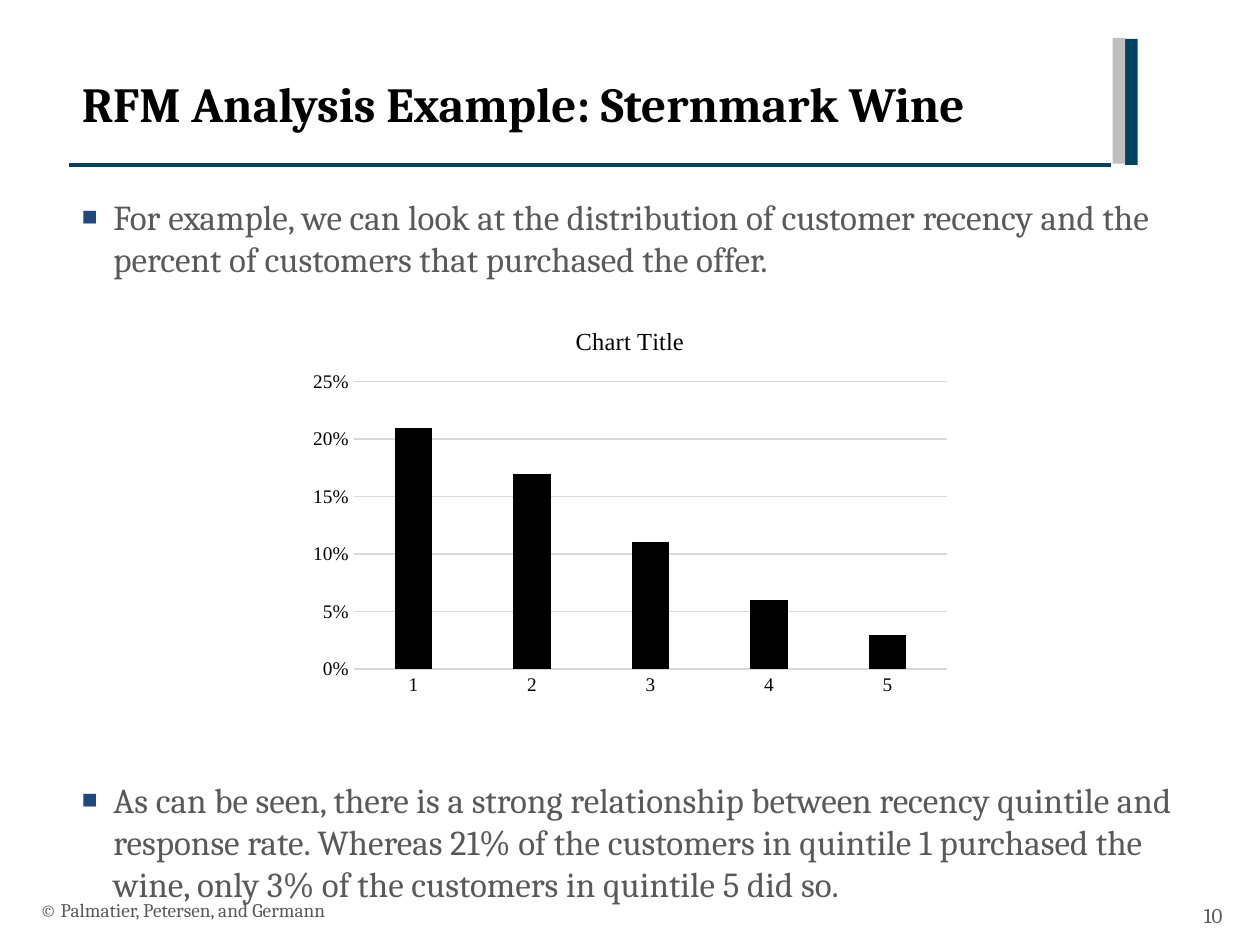
import pptx
import pptx.chart.data
import pptx.dml.color
import pptx.enum.chart
import pptx.enum.shapes
import pptx.enum.text
import pptx.oxml
import pptx.oxml.ns
import pptx.util

SCALE = 9144
COLORS = {
    "navy": "004264",
    "silver": "BFBFBF",
    "ink": "000000",
    "body": "595959",
    "bullet": "1F497D",
    "grid": "D9D9D9",
}
SERIF = "Cambria"
CHART_SERIF = "Times New Roman"


def px(*lengths):
    return [pptx.util.Emu(length * SCALE) for length in lengths]


def color(name):
    return pptx.dml.color.RGBColor.from_string(COLORS[name])


def add_xml(parent, tag, **attributes):
    element = pptx.oxml.parse_xml(f"<{tag} {pptx.oxml.ns.nsdecls('a')}/>")
    for key, value in attributes.items():
        element.set(key, value)
    parent.append(element)
    return element


class SlideBuilder:
    def __init__(self, slide):
        self.slide = slide

    def style(self, font, size, tint, face=SERIF, bold=False):
        font.name = face
        font.size = pptx.util.Pt(size)
        font.bold = bold
        font.color.rgb = color(tint)

    def place(self, holder, box):
        holder.left, holder.top, holder.width, holder.height = px(*box)
        frame = holder.text_frame
        frame.word_wrap = True
        frame.auto_size = pptx.enum.text.MSO_AUTO_SIZE.NONE
        frame.vertical_anchor = pptx.enum.text.MSO_ANCHOR.TOP
        return frame

    def rule(self, start, end, tint, weight):
        line = self.slide.shapes.add_connector(
            pptx.enum.shapes.MSO_CONNECTOR.STRAIGHT, *px(*start, *end))
        line.line.color.rgb = color(tint)
        line.line.width = pptx.util.Pt(weight)
        add_xml(line._element.spPr, "a:effectLst")

    def bar(self, box, tint):
        block = self.slide.shapes.add_shape(
            pptx.enum.shapes.MSO_SHAPE.RECTANGLE, *px(*box))
        block.shadow.inherit = False
        block.fill.solid()
        block.fill.fore_color.rgb = color(tint)
        block.line.fill.background()

    def title(self, text, box):
        frame = self.place(self.slide.shapes.title, box)
        frame.text = text
        heading = frame.paragraphs[0]
        heading.alignment = pptx.enum.text.PP_ALIGN.LEFT
        self.style(heading.font, 28, "ink", bold=True)

    def bullets(self, points, box, gap):
        frame = self.place(self.slide.placeholders[1], box)
        frame.text = "\n".join(points)
        for index, point in enumerate(frame.paragraphs):
            point.space_before = pptx.util.Pt(gap if index else 0)
            properties = point._p.get_or_add_pPr()
            properties.set("marL", "228600")
            properties.set("indent", "-228600")
            bullet_color = add_xml(properties, "a:buClr")
            add_xml(bullet_color, "a:srgbClr", val=COLORS["bullet"])
            add_xml(properties, "a:buSzPct", val="75000")
            add_xml(properties, "a:buChar", char="■")
            self.style(point.font, 20, "body")

    def label(self, text, box, size, alignment):
        frame = self.slide.shapes.add_textbox(*px(*box)).text_frame
        frame.word_wrap = True
        frame.vertical_anchor = pptx.enum.text.MSO_ANCHOR.MIDDLE
        frame.text = text
        frame.paragraphs[0].alignment = alignment
        self.style(frame.paragraphs[0].font, size, "body")

    def column_chart(self, heading, series, rates, box):
        data = pptx.chart.data.CategoryChartData(number_format="0%")
        data.categories = [str(quintile) for quintile in range(1, len(rates) + 1)]
        data.add_series(series, rates)
        chart = self.slide.shapes.add_chart(
            pptx.enum.chart.XL_CHART_TYPE.COLUMN_CLUSTERED, *px(*box), data).chart
        self.style(chart.font, 10, "ink")
        chart.has_legend = False
        chart.has_title = True
        chart.chart_title.text_frame.text = heading
        self.style(chart.chart_title.text_frame.paragraphs[0].font, 14, "ink", CHART_SERIF)

        plot = chart.plots[0]
        plot.vary_by_categories = False
        plot.gap_width = 219
        plot.overlap = -27
        plot.series[0].format.fill.solid()
        plot.series[0].format.fill.fore_color.rgb = color("ink")

        quintiles, percents = chart.category_axis, chart.value_axis
        for axis in (quintiles, percents):
            axis.major_tick_mark = pptx.enum.chart.XL_TICK_MARK.NONE
            axis.minor_tick_mark = pptx.enum.chart.XL_TICK_MARK.NONE
            self.style(axis.tick_labels.font, 11, "ink", CHART_SERIF)
        percents.minimum_scale = 0
        percents.maximum_scale = 0.25
        percents.major_unit = 0.05
        percents.tick_labels.number_format = "0%"
        percents.tick_labels.number_format_is_linked = False
        percents.format.line.fill.background()
        percents.has_major_gridlines = True
        for line in (quintiles.format.line, percents.major_gridlines.format.line):
            line.color.rgb = color("grid")
            line.width = pptx.util.Pt(0.75)


def main():
    deck = pptx.Presentation()
    deck.slide_width, deck.slide_height = px(1000, 750)
    builder = SlideBuilder(deck.slides.add_slide(deck.slide_layouts[1]))
    align = pptx.enum.text.PP_ALIGN

    builder.rule((55, 131), (882, 131), "navy", 2)
    builder.bar((893, 31, 10, 100), "navy")
    builder.bar((883, 30, 10, 100), "silver")
    builder.title("RFM Analysis Example: Sternmark Wine", (55, 53, 826, 71))
    builder.bullets([
        "For example, we can look at the distribution of customer recency and the "
        "percent of customers that purchased the offer.",
        "As can be seen, there is a strong relationship between recency quintile and "
        "response rate. Whereas 21% of the customers in quintile 1 purchased the wine, "
        "only 3% of the customers in quintile 5 did so.",
    ], (55, 150, 925, 540), 285)
    builder.label("© Palmatier, Petersen, and Germann", (22, 702, 670, 40), 11, align.LEFT)
    builder.label("10", (919, 706, 61, 40), 12, align.RIGHT)
    builder.column_chart("Chart Title", "Series 1", (0.21, 0.17, 0.11, 0.06, 0.03),
                         (238, 243, 524, 315))
    deck.save("out.pptx")


if __name__ == "__main__":
    main()
